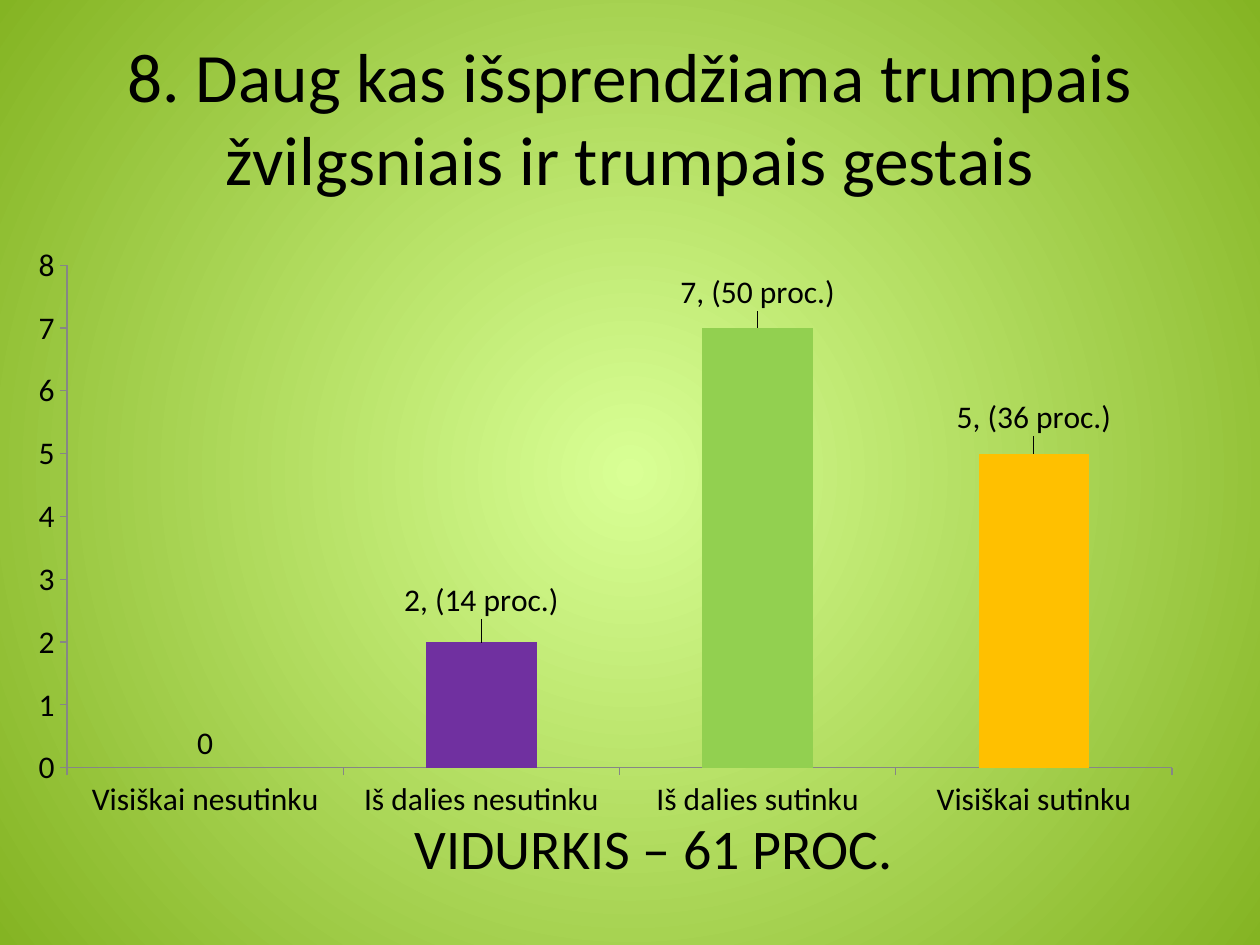
from typing import NamedTuple, Optional

from lxml.etree import SubElement
from pptx import Presentation
from pptx.chart.data import CategoryChartData
from pptx.dml.color import RGBColor
from pptx.enum.chart import XL_CHART_TYPE, XL_LABEL_POSITION, XL_TICK_MARK
from pptx.enum.text import MSO_ANCHOR, PP_ALIGN
from pptx.oxml import parse_xml
from pptx.oxml.ns import nsdecls, qn
from pptx.util import Pt

FONT = "Calibri"
COLORS = {
    "text": "000000",
    "center": "D9FF95",
    "edge": "84B423",
    "axis": "868686",
    "series": "94C600",
    "purple": "7030A0",
    "green": "92D050",
    "amber": "FFC000",
}


class Caption(NamedTuple):
    text: str
    left: float
    top: float
    width: float
    height: float
    size: float


class Answer(NamedTuple):
    category: str
    count: int
    color: Optional[str] = None
    label: Optional[str] = None
    label_shift: float = 0


CAPTIONS = [
    Caption("8. Daug kas išsprendžiama trumpais žvilgsniais ir trumpais gestais",
            36, 21.6, 648, 90, 39.6),
    Caption("VIDURKIS – 61 PROC.", 64.8, 460.8, 617.76, 46.08, 32),
]
ANSWERS = [
    Answer("Visiškai nesutinku", 0),
    Answer("Iš dalies nesutinku", 2, "purple", "2, (14 proc.)", -0.03),
    Answer("Iš dalies sutinku", 7, "green", "7, (50 proc.)", -0.02),
    Answer("Visiškai sutinku", 5, "amber", "5, (36 proc.)", -0.02),
]


def rgb(name: str) -> RGBColor:
    return RGBColor.from_string(COLORS[name])


def style_font(font, size: float) -> None:
    font.name = FONT
    font.size = Pt(size)
    font.color.rgb = rgb("text")


def paint_background(page) -> None:
    """Fill the page with a gradient spreading in circles from its centre."""
    fill = page.background.fill
    fill.gradient()
    for stop, name in zip(fill.gradient_stops, ("center", "edge")):
        stop.color.rgb = rgb(name)
    linear = next(page.background._cSld.iter(qn("a:lin")))
    circle = parse_xml(
        f'<a:path {nsdecls("a")} path="circle">'
        '<a:fillToRect l="50000" t="50000" r="50000" b="50000"/></a:path>')
    linear.getparent().replace(linear, circle)


def add_caption(page, caption: Caption) -> None:
    box = page.shapes.add_textbox(Pt(caption.left), Pt(caption.top),
                                  Pt(caption.width), Pt(caption.height))
    frame = box.text_frame
    frame.word_wrap = True
    frame.vertical_anchor = MSO_ANCHOR.MIDDLE
    frame.text = caption.text
    para = frame.paragraphs[0]
    para.alignment = PP_ALIGN.CENTER
    style_font(para.runs[0].font, caption.size)


def make_layout(**values):
    """Build a manual chart layout; values are fractions of the chart."""
    layout = parse_xml(f'<c:layout {nsdecls("c")}/>')
    manual = SubElement(layout, qn("c:manualLayout"))
    for tag, value in values.items():
        SubElement(manual, qn(f"c:{tag}")).set("val", str(value))
    return layout


def style_axis(axis) -> None:
    axis.has_major_gridlines = False
    axis.major_tick_mark = XL_TICK_MARK.OUTSIDE
    axis.minor_tick_mark = XL_TICK_MARK.NONE
    axis.format.line.color.rgb = rgb("axis")
    axis.format.line.width = Pt(0.75)
    style_font(axis.tick_labels.font, 18)


def style_point(series, index: int, answer: Answer) -> None:
    point = series.points[index]
    point.format.fill.solid()
    point.format.fill.fore_color.rgb = rgb(answer.color)
    label = point.data_label
    label.text_frame.text = answer.label
    style_font(label.text_frame.paragraphs[0].runs[0].font, 18)
    label.position = XL_LABEL_POSITION.OUTSIDE_END
    number = series.points[index].data_label._dLbl.find(qn("c:idx"))
    number.addnext(make_layout(x=0, y=answer.label_shift))


def add_answer_chart(page) -> None:
    data = CategoryChartData()
    data.categories = [answer.category for answer in ANSWERS]
    data.add_series("Series 1", [answer.count for answer in ANSWERS])
    chart = page.shapes.add_chart(XL_CHART_TYPE.COLUMN_CLUSTERED, Pt(8.64), Pt(133.92),
                                  Pt(674.64), Pt(339.84), data).chart
    chart.has_legend = False
    chart.has_title = False
    style_font(chart.font, 18)
    style_axis(chart.category_axis)
    style_axis(chart.value_axis)
    chart.value_axis.minimum_scale = 0
    chart.value_axis.maximum_scale = 8
    chart.value_axis.major_unit = 1

    plot_area = chart._chartSpace.chart.plotArea
    for old in plot_area.findall(qn("c:layout")):
        plot_area.remove(old)
    plot_area.insert(0, make_layout(layoutTarget="inner", xMode="edge", yMode="edge",
                                    x=0.044, y=0.052, w=0.936, h=0.845))

    plot = chart.plots[0]
    plot.gap_width = 150
    plot.vary_by_categories = False
    series = plot.series[0]
    series.invert_if_negative = False
    series.format.fill.solid()
    series.format.fill.fore_color.rgb = rgb("series")
    labels = series.data_labels
    labels.show_value = True
    labels.position = XL_LABEL_POSITION.OUTSIDE_END
    style_font(labels.font, 18)
    for index, answer in enumerate(ANSWERS):
        if answer.label:
            style_point(series, index, answer)


def main() -> None:
    deck = Presentation()
    deck.slide_width, deck.slide_height = Pt(720), Pt(540)
    page = deck.slides.add_slide(deck.slide_layouts[6])
    paint_background(page)
    add_answer_chart(page)
    for caption in CAPTIONS:
        add_caption(page, caption)
    deck.save("out.pptx")


if __name__ == "__main__":
    main()
